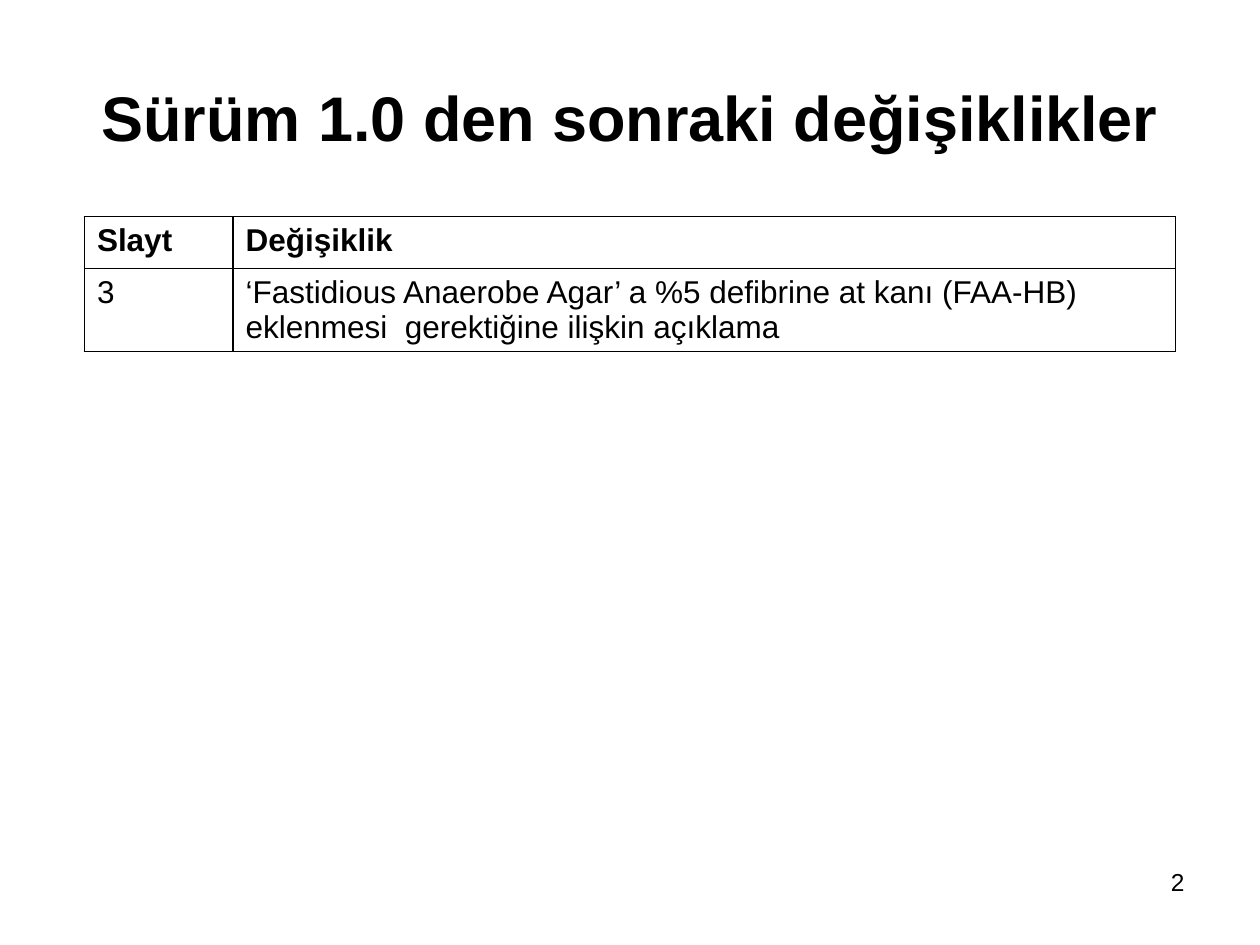
import pptx
import pptx.util
import pptx.dml.color
import pptx.enum.text
import pptx.oxml
import pptx.oxml.ns
from pptx.util import Inches


def color(value):
    return pptx.dml.color.RGBColor.from_string(value)


def write(text_frame, text, size, bold=False, alignment=pptx.enum.text.PP_ALIGN.LEFT):
    paragraph = text_frame.paragraphs[0]
    paragraph.alignment = alignment
    run = paragraph.add_run()
    run.text = text
    font_format = {"name": "Arial", "size": pptx.util.Pt(size), "bold": bold}
    for name, value in font_format.items():
        setattr(run.font, name, value)
    run.font.color.rgb = color("000000")


presentation = pptx.Presentation()
presentation.slide_width = Inches(10)
presentation.slide_height = Inches(7.5)
slide = presentation.slides.add_slide(presentation.slide_layouts[5])
slide.background.fill.solid()
slide.background.fill.fore_color.rgb = color("FFFFFF")

title = slide.shapes.title
title_format = {"left": 0.5, "top": 0.3, "width": 9, "height": 1.25}
for name, value in title_format.items():
    setattr(title, name, Inches(value))
title.text_frame.vertical_anchor = pptx.enum.text.MSO_ANCHOR.MIDDLE
write(title.text_frame, "Sürüm 1.0 den sonraki değişiklikler", 36, True,
      pptx.enum.text.PP_ALIGN.CENTER)

changes = [
    ["Slayt", "Değişiklik"],
    ["3", "‘Fastidious Anaerobe Agar’ a %5 defibrine at kanı (FAA-HB) "
          "eklenmesi  gerektiğine ilişkin açıklama"],
]
table = slide.shapes.add_table(
    2, 2, Inches(0.67), Inches(1.72), Inches(8.66), Inches(1.07)).table
table.horz_banding = False
for column, width in zip(table.columns, [1.18, 7.48]):
    column.width = Inches(width)
for row, height in zip(table.rows, [0.41, 0.66]):
    row.height = Inches(height)

namespace = pptx.oxml.ns.nsdecls("a")
for row_index, texts in enumerate(changes):
    for column_index, text in enumerate(texts):
        cell = table.cell(row_index, column_index)
        write(cell.text_frame, text, 18, row_index == 0)
        properties = cell._tc.get_or_add_tcPr()
        for side in ["lnL", "lnR", "lnT", "lnB"]:
            properties.append(pptx.oxml.parse_xml(
                f'<a:{side} {namespace} w="12700"><a:solidFill>'
                f'<a:srgbClr val="000000"/></a:solidFill></a:{side}>'))
        cell.fill.solid()
        cell.fill.fore_color.rgb = color("FFFFFF")

slide_number = slide.shapes.add_textbox(
    Inches(7.17), Inches(6.83), Inches(2.33), Inches(0.52))
slide_number.text_frame.word_wrap = True
write(slide_number.text_frame, "2", 14, alignment=pptx.enum.text.PP_ALIGN.RIGHT)

presentation.save("out.pptx")
